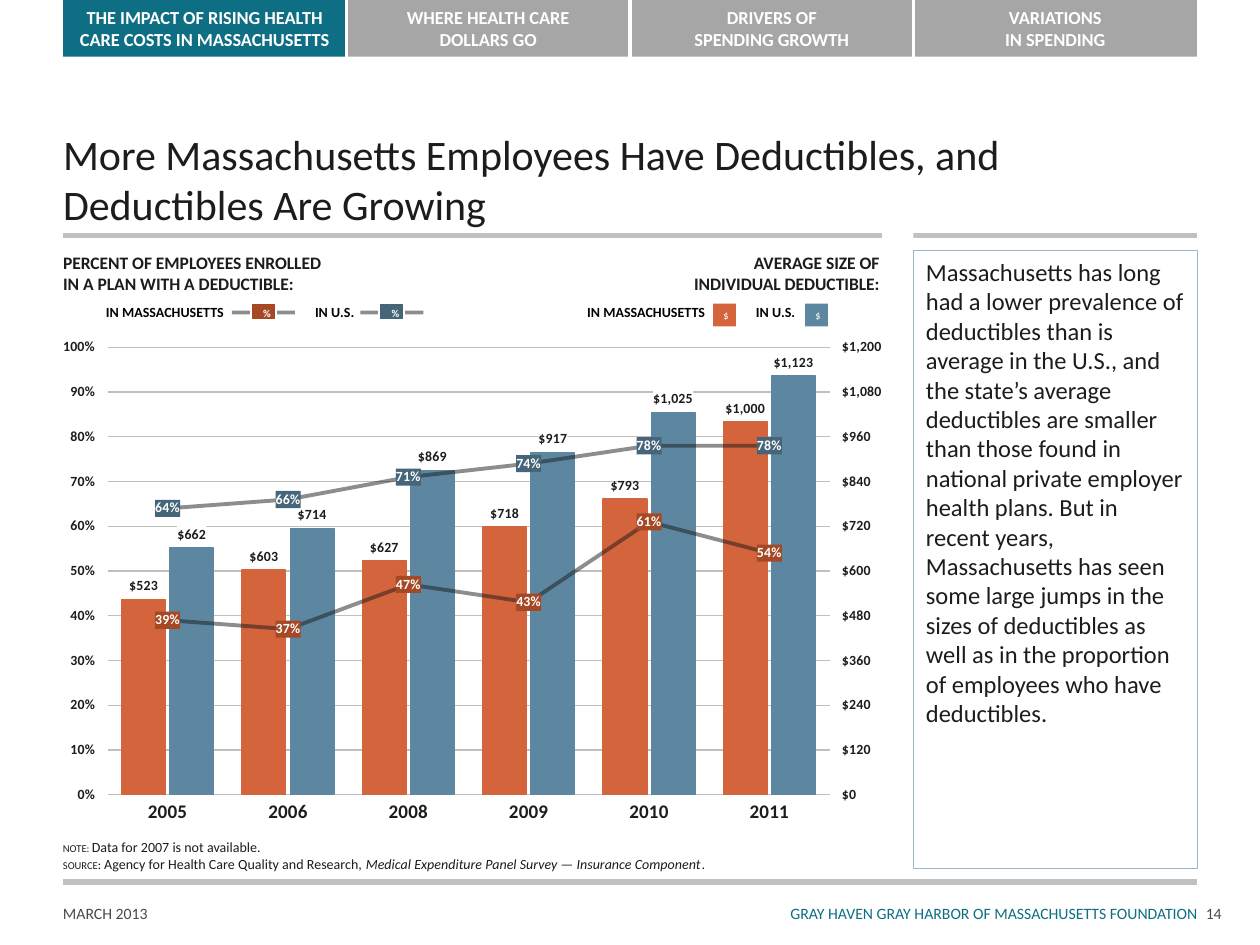
from collections import namedtuple
from copy import deepcopy
from dataclasses import dataclass
from lxml.etree import SubElement
from pptx import Presentation
from pptx.chart.axis import ValueAxis
from pptx.chart.data import CategoryChartData
from pptx.dml.color import RGBColor
from pptx.enum.chart import (XL_CHART_TYPE, XL_LABEL_POSITION, XL_MARKER_STYLE, XL_TICK_LABEL_POSITION,
                             XL_TICK_MARK)
from pptx.enum.shapes import MSO_CONNECTOR, MSO_SHAPE
from pptx.enum.text import MSO_ANCHOR, MSO_AUTO_SIZE, PP_ALIGN
from pptx.oxml import parse_xml
from pptx.oxml.ns import nsdecls, qn
from pptx.util import Emu, Pt


@dataclass(frozen=True)
class Theme:
    font: str = "Calibri"
    ink: str = "1C1C1C"
    black: str = "000000"
    white: str = "FFFFFF"
    muted: str = "4B4B4B"
    teal: str = "0E6E83"
    tab: str = "A6A6A6"
    rule: str = "C0C0C0"
    grid: str = "BFBFBF"
    frame: str = "9EB7C7"
    state: str = "D3643B"
    state_dark: str = "A54825"
    nation: str = "5D87A1"
    nation_dark: str = "466579"
    title: float = 24
    body: float = 14
    years: float = 11
    tabs: float = 10.5
    heading: float = 10
    footer: float = 9
    label: float = 8
    colon: float = 7
    tiny: float = 6


T = Theme()
Box = namedtuple("Box", "x y w h")
TEXT_INSETS = (0, 5, 0, 5)


def px(length):
    return Emu(length * 9144)


def rgb(color):
    return RGBColor.from_string(color)


def style(font, size, color=T.ink, bold=False, italic=False):
    font.name, font.size, font.bold, font.italic = T.font, Pt(size), bold, italic
    font.color.rgb = rgb(color)


def write(frame, paragraphs, size, color=T.ink, bold=False, align=PP_ALIGN.LEFT,
          anchor=MSO_ANCHOR.TOP, insets=TEXT_INSETS, wrap=True):
    frame.auto_size, frame.word_wrap, frame.vertical_anchor = MSO_AUTO_SIZE.NONE, wrap, anchor
    frame.margin_left, frame.margin_top, frame.margin_right, frame.margin_bottom = map(px, insets)
    for number, runs in enumerate(paragraphs):
        paragraph = frame.add_paragraph() if number else frame.paragraphs[0]
        paragraph.alignment = align
        for text, changes in runs:
            for row, line in enumerate(text.split("\n")):
                if row:
                    paragraph.add_line_break()
                run = paragraph.add_run()
                run.text = line
                style(run.font, **{"size": size, "color": color, "bold": bold, **changes})


def add_text(slide, box, text, size, **options):
    textbox = slide.shapes.add_textbox(*map(px, box))
    write(textbox.text_frame, [[(text, {})]], size, **options)


def add_rect(slide, box, fill=None, line=None, width=1):
    rect = slide.shapes.add_shape(MSO_SHAPE.RECTANGLE, *map(px, box))
    rect.shadow.inherit = False
    if fill:
        rect.fill.solid()
        rect.fill.fore_color.rgb = rgb(fill)
    else:
        rect.fill.background()
    if line:
        rect.line.color.rgb = rgb(line)
        rect.line.width = Pt(width)
    else:
        rect.line.fill.background()
    return rect


def half_transparent(part):
    for color in part._element.xpath("./*/a:ln//a:srgbClr"):
        SubElement(color, qn("a:alpha"), val="50000")


def add_line(slide, start, end, color, width):
    line = slide.shapes.add_connector(MSO_CONNECTOR.STRAIGHT, *map(px, start + end))
    line.line.color.rgb = rgb(color)
    line.line.width = Pt(width)
    SubElement(line._element.spPr, qn("a:effectLst"))
    return line


def navigation(slide, box, sections):
    width = box.w // len(sections)
    edges = [box.x + width * number for number in range(len(sections))]
    for edge, section in zip(edges, sections):
        tab = add_rect(slide, (edge, box.y, width, box.h), T.teal if edge == box.x else T.tab)
        write(tab.text_frame, [[(section, {})]], T.tabs, T.white, True, PP_ALIGN.CENTER,
              MSO_ANCHOR.BOTTOM, (5, 5, 5, 5))
    for edge in edges[1:]:
        add_line(slide, (edge, box.y), (edge, box.y + box.h), T.white, 2)


def heading(slide, box):
    bottom = box.y + box.h
    add_line(slide, (box.x, bottom), (box.x + box.w, bottom), T.rule, 3)
    add_rect(slide, (box.x + 650, bottom - 8, 25, 13), T.white)
    title = slide.shapes.title
    title.left, title.top, title.width, title.height = map(px, box)
    text = "More Massachusetts Employees Have Deductibles, and \nDeductibles Are Growing"
    write(title.text_frame, [[(text, {})]], T.title, anchor=MSO_ANCHOR.BOTTOM)


def footer(slide, box):
    add_line(slide, (box.x, box.y), (box.x + box.w, box.y), T.rule, 3)
    top, no_insets = box.y + 17, (0, 0, 0, 0)
    add_text(slide, (box.x, top, 100, 32), "MARCH 2013", T.footer, color=T.muted, insets=no_insets)
    add_text(slide, (box.x + 469, top, 431, 32), "GRAY HAVEN GRAY HARBOR OF MASSACHUSETTS FOUNDATION",
             T.footer, color=T.teal, align=PP_ALIGN.RIGHT, insets=no_insets)
    add_text(slide, (box.x + 907, top, 43, 32), "14", T.footer, color=T.muted, insets=no_insets)


def percent_key(slide, box, text, color, offset):
    add_text(slide, box, text, T.label, color=T.black, bold=True, wrap=False)
    left, middle = box.x + offset, box.y + 12
    half_transparent(add_line(slide, (left, middle), (left + 50, middle), T.ink, 2.25))
    swatch = add_rect(slide, (left + 15, middle - 7, 20, 13), color, T.white)
    write(swatch.text_frame, [[("%", {})]], T.tiny, T.white, True, PP_ALIGN.CENTER,
          MSO_ANCHOR.BOTTOM, (10, 0, 10, 0))


def dollar_key(slide, box, text, color, offset):
    add_text(slide, box, text, T.label, color=T.black, bold=True, wrap=False)
    swatch = add_rect(slide, (box.x + offset, box.y + 5, 18, 18), color)
    write(swatch.text_frame, [[("$", {})]], T.tiny, T.white, False, PP_ALIGN.CENTER,
          MSO_ANCHOR.MIDDLE, (10, 5, 10, 5))


def legends(slide, box):
    add_text(slide, (box.x, box.y, 215, 27), "PERCENT OF EMPLOYEES ENROLLED\nIN A PLAN WITH A DEDUCTIBLE:",
             T.heading, bold=True)
    add_text(slide, (box.x + 486, box.y, 162, 27), "AVERAGE SIZE OF\nINDIVIDUAL DEDUCTIBLE:",
             T.heading, bold=True, align=PP_ALIGN.RIGHT, wrap=False)
    top = box.y + 41
    percent_key(slide, Box(box.x + 34, top, 119, 27), "IN MASSACHUSETTS", T.state_dark, 100)
    percent_key(slide, Box(box.x + 200, top, 102, 27), "IN U.S.", T.nation_dark, 36)
    dollar_key(slide, Box(box.x + 416, top, 119, 27), "IN MASSACHUSETTS", T.state, 100)
    dollar_key(slide, Box(box.x + 550, top, 46, 27), "IN U.S.", T.nation, 39)


def format_axis(axis, number_format, maximum, step, side):
    axis.minimum_scale, axis.maximum_scale, axis.major_unit = 0, maximum, step
    axis.major_tick_mark = XL_TICK_MARK.CROSS
    axis.tick_label_position = side
    axis.format.line.fill.background()
    axis.tick_labels.number_format = number_format
    axis.tick_labels.number_format_is_linked = False
    style(axis.tick_labels.font, T.label, bold=True)


def label_series(series, number_format, position, color, fill=None):
    labels = series.data_labels
    labels.show_value, labels.position = True, position
    labels.number_format, labels.number_format_is_linked = number_format, False
    style(labels.font, T.label, color, True)
    if fill:
        labels._element.find(qn("c:txPr")).addprevious(parse_xml(
            f'<c:spPr {nsdecls("c", "a")}><a:solidFill><a:srgbClr val="{fill}"/></a:solidFill></c:spPr>'))


def move_to_percent_axis(chart, moved):
    area = chart._chartSpace.chart.plotArea
    bars = area.find(qn("c:barChart"))
    lines = parse_xml(f'<c:lineChart {nsdecls("c")}><c:grouping val="standard"/><c:varyColors val="0"/>'
                      '<c:marker val="1"/><c:axId val="501"/><c:axId val="502"/></c:lineChart>')
    bars.addnext(lines)
    for series in bars.findall(qn("c:ser"))[-moved:]:
        for invert in series.findall(qn("c:invertIfNegative")):
            series.remove(invert)
        lines.find(qn("c:marker")).addprevious(series)
    last_axis = area.find(qn("c:valAx"))
    for tag, own, other in (("c:valAx", "502", "501"), ("c:catAx", "501", "502")):
        axis = deepcopy(area.find(qn(tag)))
        axis.find(qn("c:axId")).set("val", own)
        axis.find(qn("c:crossAx")).set("val", other)
        last_axis.addnext(axis)
        if tag == "c:catAx":
            axis.find(qn("c:delete")).set("val", "1")
        else:
            axis.find(qn("c:crosses")).set("val", "min")
            percent_axis = ValueAxis(axis)
    percent_axis.has_major_gridlines = False
    return percent_axis


def place_plot(chart, **fractions):
    area = chart._chartSpace.chart.plotArea
    for layout in area.findall(qn("c:layout")):
        area.remove(layout)
    places = "".join(f'<c:{key} val="{value}"/>' for key, value in fractions.items())
    area.insert(0, parse_xml(f'<c:layout {nsdecls("c")}><c:manualLayout><c:layoutTarget val="inner"/>'
                             f'<c:xMode val="edge"/><c:yMode val="edge"/>{places}</c:manualLayout></c:layout>'))


def deductibles_chart(slide, box):
    data = CategoryChartData()
    data.categories = ["2005", "2006", "2008", "2009", "2010", "2011"]
    data.add_series("Series 1", (523, 603, 627, 718, 793, 1000))
    data.add_series("Series 2", (662, 714, 869, 917, 1025, 1123))
    data.add_series("Series 3", (0.39, 0.37, 0.47, 0.43, 0.61, 0.54))
    data.add_series("Series 4", (0.64, 0.66, 0.71, 0.74, 0.78, 0.78))
    chart = slide.shapes.add_chart(XL_CHART_TYPE.COLUMN_CLUSTERED, *map(px, box), data).chart
    chart.has_title = chart.has_legend = False
    style(chart.font, T.label)
    years, dollars = chart.category_axis, chart.value_axis
    percents = move_to_percent_axis(chart, 2)
    format_axis(percents, "0%", 1, 0.1, XL_TICK_LABEL_POSITION.LOW)
    format_axis(dollars, '"$"#,##0', 1200, 120, XL_TICK_LABEL_POSITION.HIGH)
    years.major_tick_mark = XL_TICK_MARK.NONE
    style(years.tick_labels.font, T.years, bold=True)
    for line in (years.format.line, dollars.major_gridlines.format.line):
        line.color.rgb = rgb(T.grid)
        line.width = Pt(0.75)
    place_plot(chart, x=0.05, y=0.02, w=0.89, h=0.92)
    bars, lines = chart.plots
    bars.gap_width, bars.overlap, bars.vary_by_categories = 65, -10, False
    for series, color, backing in zip(bars.series, (T.state, T.nation), (None, T.white)):
        series.format.fill.solid()
        series.format.fill.fore_color.rgb = rgb(color)
        series.format.line.color.rgb = rgb(color)
        series.format.line.width = Pt(0.75)
        label_series(series, '"$"#,##0', XL_LABEL_POSITION.OUTSIDE_END, T.ink, backing)
    for series, color, dark in zip(lines.series, (T.state, T.nation), (T.state_dark, T.nation_dark)):
        series.smooth = False
        series.format.line.color.rgb = rgb(T.ink)
        series.format.line.width = Pt(2.25)
        half_transparent(series)
        series.marker.style, series.marker.size = XL_MARKER_STYLE.CIRCLE, 7
        series.marker.format.fill.solid()
        series.marker.format.fill.fore_color.rgb = rgb(color)
        series.marker.format.line.fill.background()
        label_series(series, "0%", XL_LABEL_POSITION.CENTER, T.white, dark)


def commentary(slide, box):
    panel = add_rect(slide, box, line=T.frame, width=0.25)
    text = ("Massachusetts has long had a lower prevalence of deductibles than is average in the U.S., "
            "and the state’s average deductibles are smaller than those found in national private employer "
            "health plans. But in recent years, Massachusetts has seen some large jumps in the sizes of "
            "deductibles as well as in the proportion of employees who have deductibles.")
    write(panel.text_frame, [[(text, {})]], T.body, insets=(10, 5, 10, 5))


def sources(slide, box):
    note = [("NOTE: ", {"size": T.tiny}), ("Data for 2007 is not available.", {})]
    source = [("SOURCE", {"size": T.tiny}), (":", {"size": T.colon, "color": T.black}), (" ", {}),
              ("Agency for Health Care Quality and Research, ", {}),
              ("Medical Expenditure Panel Survey — Insurance Component", {"italic": True}), (".", {})]
    textbox = slide.shapes.add_textbox(*map(px, box))
    write(textbox.text_frame, [note, source], T.label, anchor=MSO_ANCHOR.BOTTOM)


def main():
    deck = Presentation()
    deck.slide_width, deck.slide_height = px(1000), px(750)
    slide = deck.slides.add_slide(deck.slide_layouts[5])
    navigation(slide, Box(50, 0, 900, 45), (
        "THE IMPACT OF RISING HEALTH CARE COSTS IN MASSACHUSETTS", "WHERE HEALTH CARE\nDOLLARS GO",
        "DRIVERS OF\nSPENDING GROWTH", "VARIATIONS\nIN SPENDING"))
    heading(slide, Box(50, 100, 900, 87))
    legends(slide, Box(50, 195, 650, 68))
    deductibles_chart(slide, Box(50, 268, 650, 386))
    commentary(slide, Box(725, 199, 225, 490))
    sources(slide, Box(50, 660, 593, 37))
    footer(slide, Box(50, 700, 900, 50))
    deck.save("out.pptx")


if __name__ == "__main__":
    main()
